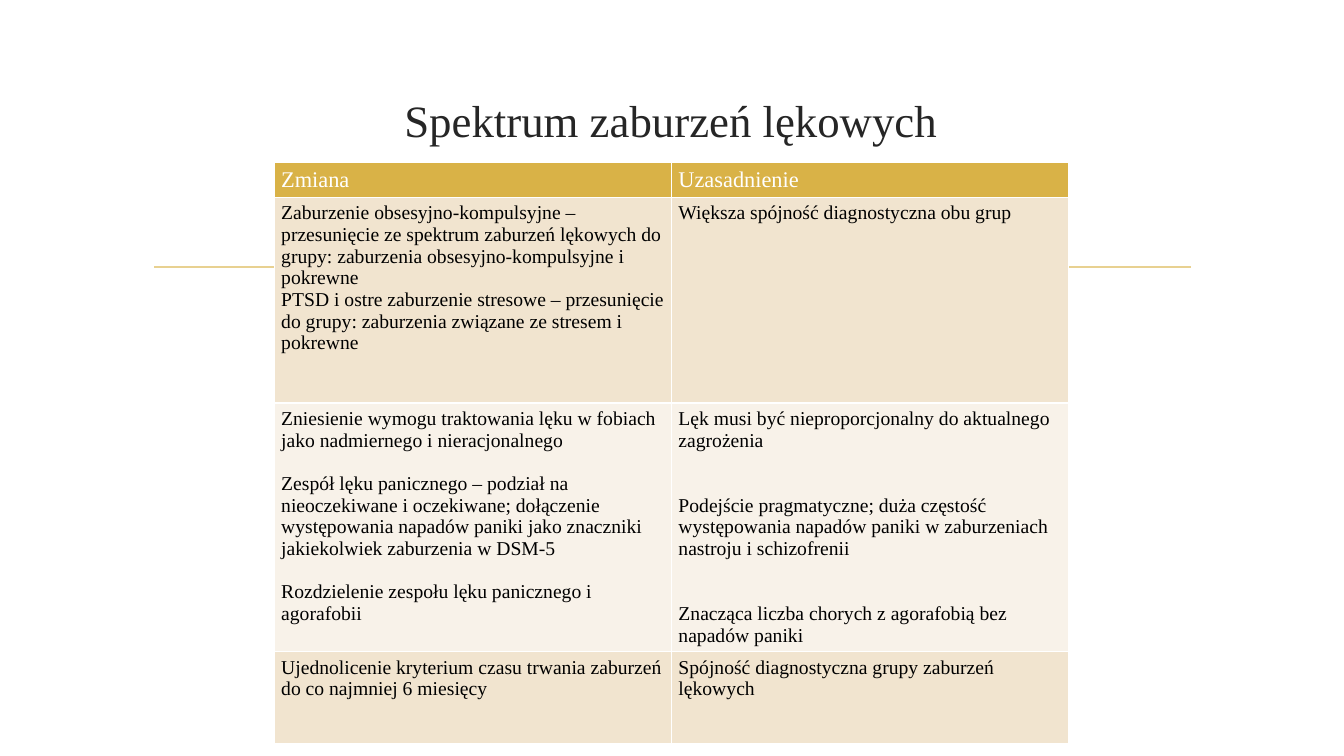
from dataclasses import dataclass

from lxml.etree import SubElement
from pptx import Presentation
from pptx.dml.color import RGBColor
from pptx.enum.shapes import MSO_CONNECTOR as Connector
from pptx.enum.text import MSO_ANCHOR as Anchor, MSO_AUTO_SIZE as AutoSize, PP_ALIGN as Align
from pptx.oxml import parse_xml
from pptx.oxml.ns import nsdecls, qn
from pptx.util import Inches, Pt

FONT = "Times New Roman"
WHITE = RGBColor(0xFF, 0xFF, 0xFF)
BLACK = RGBColor(0x00, 0x00, 0x00)
CHARCOAL = RGBColor(0x26, 0x26, 0x26)
GOLD = RGBColor(0xD9, 0xB2, 0x47)
PALE_GOLD = RGBColor(0xE8, 0xD1, 0x91)
SAND = RGBColor(0xF1, 0xE4, 0xCF)
CREAM = RGBColor(0xF8, 0xF2, 0xE9)

SLIDE_WIDTH = Inches(13.33)
SLIDE_HEIGHT = Inches(7.5)
BODY_LINE = 15.5


@dataclass(frozen=True)
class CellText:
    paragraphs: tuple[str, ...]
    gap: float = 0


@dataclass(frozen=True)
class ChangeRow:
    change: CellText
    reason: CellText
    height: float
    fill: RGBColor
    size: int = 14
    color: RGBColor = BLACK


ROWS = [
    ChangeRow(CellText(("Zmiana",)), CellText(("Uzasadnienie",)), 4.53, GOLD, 16, WHITE),
    ChangeRow(
        CellText((
            "Zaburzenie obsesyjno-kompulsyjne – przesunięcie ze spektrum zaburzeń lękowych "
            "do grupy: zaburzenia obsesyjno-kompulsyjne i pokrewne",
            "PTSD i ostre zaburzenie stresowe – przesunięcie do grupy: "
            "zaburzenia związane ze stresem i pokrewne",
        )),
        CellText(("Większa spójność diagnostyczna obu grup",)),
        27.2, SAND,
    ),
    ChangeRow(
        CellText((
            "Zniesienie wymogu traktowania lęku w fobiach jako nadmiernego i nieracjonalnego",
            "Zespół lęku panicznego – podział na nieoczekiwane i oczekiwane; dołączenie "
            "występowania napadów paniki jako znaczniki jakiekolwiek zaburzenia w DSM-5",
            "Rozdzielenie zespołu lęku panicznego i agorafobii",
        ), BODY_LINE),
        CellText((
            "Lęk musi być nieproporcjonalny do aktualnego zagrożenia",
            "Podejście pragmatyczne; duża częstość występowania napadów paniki "
            "w zaburzeniach nastroju i schizofrenii",
            "Znacząca liczba chorych z agorafobią bez napadów paniki",
        ), 2 * BODY_LINE),
        32.8, CREAM,
    ),
    ChangeRow(
        CellText(("Ujednolicenie kryterium czasu trwania zaburzeń do co najmniej 6 miesięcy",)),
        CellText(("Spójność diagnostyczna grupy zaburzeń lękowych",)),
        12.13, SAND,
    ),
]


def across(percent: float) -> int:
    return round(SLIDE_WIDTH * percent / 100)


def down(percent: float) -> int:
    return round(SLIDE_HEIGHT * percent / 100)


def write_text(frame, paragraphs, *, size, color, align=Align.LEFT, gap=0) -> None:
    frame.word_wrap = True
    for index, text in enumerate(paragraphs):
        paragraph = frame.add_paragraph() if index else frame.paragraphs[0]
        paragraph.alignment = align
        paragraph.space_before = Pt(gap if index else 0)
        run = paragraph.add_run()
        run.text = text
        run.font.name = FONT
        run.font.size = Pt(size)
        run.font.bold = False
        run.font.color.rgb = color


def add_title(slide, text: str) -> None:
    title = slide.shapes.title
    title.left, title.top = across(20.4), down(6.27)
    title.width, title.height = across(59.04), down(19.07)
    frame = title.text_frame
    frame.auto_size = AutoSize.NONE
    frame.vertical_anchor = Anchor.MIDDLE
    write_text(frame, [text], size=32, color=CHARCOAL, align=Align.CENTER)


def add_rule(slide) -> None:
    rule = slide.shapes.add_connector(
        Connector.STRAIGHT, across(11.48), down(35.33), across(88.6), down(35.33)
    )
    rule.line.color.rgb = PALE_GOLD
    rule.line.width = Pt(1.25)
    SubElement(rule._element.spPr, qn("a:effectLst"))


def draw_borders(cell, color: RGBColor, width: int) -> None:
    properties = cell._tc.get_or_add_tcPr()
    for index, side in enumerate(("lnL", "lnR", "lnT", "lnB")):
        border = parse_xml(
            f'<a:{side} {nsdecls("a")} w="{width}"><a:solidFill>'
            f'<a:srgbClr val="{color}"/></a:solidFill></a:{side}>'
        )
        properties.insert(index, border)


def fill_cell(cell, content: CellText, row: ChangeRow) -> None:
    cell.margin_left = cell.margin_right = Inches(0.07)
    cell.margin_top = cell.margin_bottom = Inches(0.05)
    cell.fill.solid()
    cell.fill.fore_color.rgb = row.fill
    draw_borders(cell, WHITE, Pt(1))
    write_text(
        cell.text_frame, content.paragraphs, size=row.size, color=row.color, gap=content.gap
    )


def add_changes(slide) -> None:
    height = down(sum(row.height for row in ROWS))
    table = slide.shapes.add_table(
        len(ROWS), 2, across(20.4), down(21.47), across(59.12), height
    ).table
    for index, row in enumerate(ROWS):
        table.rows[index].height = down(row.height)
        for column, content in enumerate((row.change, row.reason)):
            fill_cell(table.cell(index, column), content, row)


def main() -> None:
    presentation = Presentation()
    presentation.slide_width = SLIDE_WIDTH
    presentation.slide_height = SLIDE_HEIGHT
    slide = presentation.slides.add_slide(presentation.slide_layouts[5])
    add_rule(slide)
    add_title(slide, "Spektrum zaburzeń lękowych")
    add_changes(slide)
    presentation.save("out.pptx")


if __name__ == "__main__":
    main()
